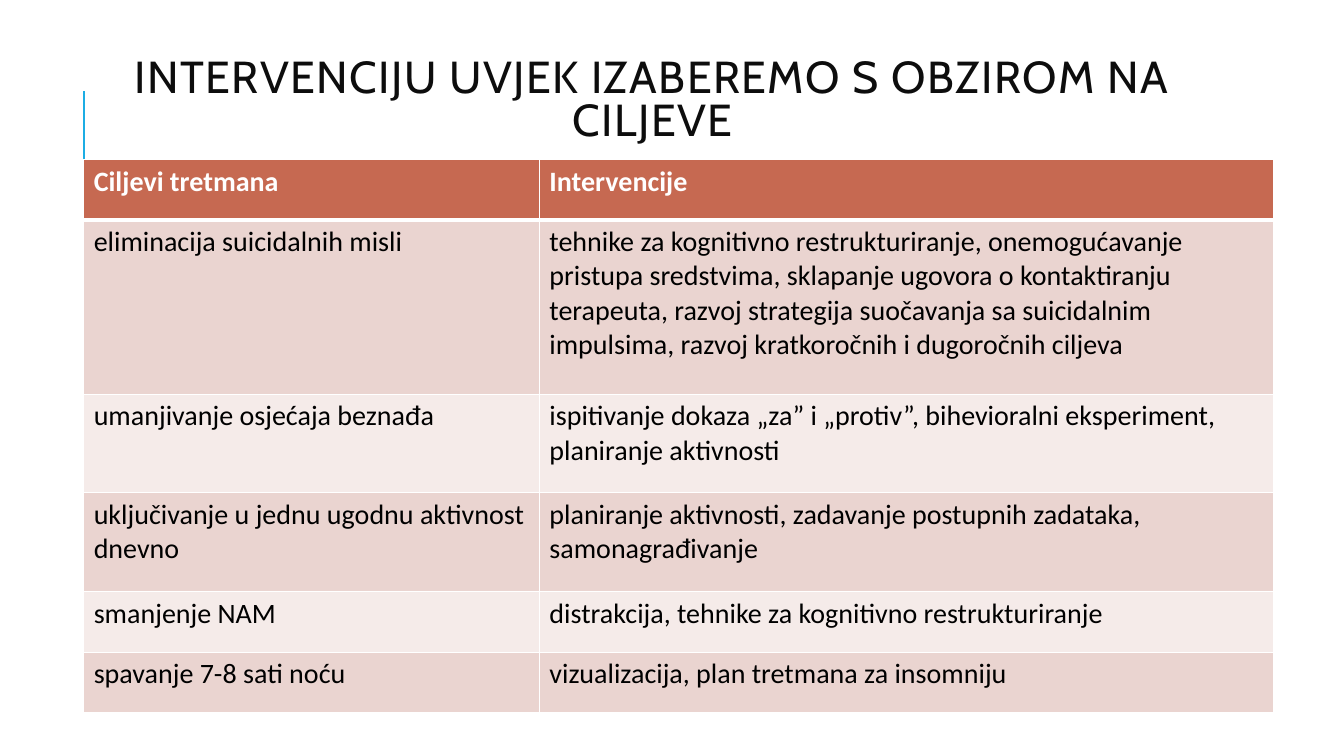
import pptx
import pptx.util
import pptx.dml.color
import pptx.enum.shapes
import pptx.enum.text
import pptx.oxml
import pptx.oxml.ns
import lxml.etree

PX = 9144  # 100 px to the inch
COLORS = {
    "white": "FFFFFF", "black": "000000", "title": "0D0D0D", "accent": "1CADE4",
    "head": "C66951", "dark": "EAD4D0", "light": "F5EBE9",
}


def px(*vals):
    return [pptx.util.Emu(val * PX) for val in vals]


def style(run, font, size, color, bold=False):
    run.font.name = font
    run.font.size = pptx.util.Pt(size)
    run.font.bold = bold
    run.font.color.rgb = pptx.dml.color.RGBColor.from_string(COLORS[color])


deck = pptx.Presentation()
deck.slide_width, deck.slide_height = px(1333, 750)
slide = deck.slides.add_slide(deck.slide_layouts[6])

# Accent line beside the title
line = slide.shapes.add_connector(
    pptx.enum.shapes.MSO_CONNECTOR.STRAIGHT, *px(83, 190, 83, 90))
line.line.color.rgb = pptx.dml.color.RGBColor.from_string(COLORS["accent"])
line.line.width = pptx.util.Pt(1.5)
lxml.etree.SubElement(line._element.spPr, pptx.oxml.ns.qn("a:effectLst"))

# Title
frame = slide.shapes.add_textbox(*px(116, 19, 1063, 164)).text_frame
frame.word_wrap = True
frame.vertical_anchor = pptx.enum.text.MSO_ANCHOR.MIDDLE
frame.text = "INTERVENCIJU UVJEK IZABEREMO S OBZIROM NA CILJEVE"
para = frame.paragraphs[0]
para.alignment = pptx.enum.text.PP_ALIGN.CENTER
para.line_spacing = 0.8
style(para.runs[0], "Cabin", 32, "title")
para.runs[0]._r.get_or_add_rPr().set("spc", "100")

# Table of goals and interventions
rows = [
    (60, "Ciljevi tretmana", "Intervencije"),
    (173, "eliminacija suicidalnih misli",
     "tehnike za kognitivno restrukturiranje, onemogućavanje pristupa sredstvima, "
     "sklapanje ugovora o kontaktiranju terapeuta, razvoj strategija suočavanja sa "
     "suicidalnim impulsima, razvoj kratkoročnih i dugoročnih ciljeva"),
    (98, "umanjivanje osjećaja beznađa",
     "ispitivanje dokaza „za” i „protiv”, bihevioralni eksperiment, planiranje aktivnosti"),
    (98, "uključivanje u jednu ugodnu aktivnost dnevno",
     "planiranje aktivnosti, zadavanje postupnih zadataka, samonagrađivanje"),
    (60, "smanjenje NAM", "distrakcija, tehnike za kognitivno restrukturiranje"),
    (60, "spavanje 7-8 sati noću", "vizualizacija, plan tretmana za insomniju"),
]
table = slide.shapes.add_table(len(rows), 2, *px(83, 158, 1180, 549)).table
table.columns[0].width, table.columns[1].width = px(452, 728)

for i, (height, *texts) in enumerate(rows):
    table.rows[i].height = px(height)[0]
    fill = "head" if i == 0 else "dark" if i % 2 else "light"
    for j, text in enumerate(texts):
        cell = table.cell(i, j)
        cell.text = text
        style(cell.text_frame.paragraphs[0].runs[0], "Calibri", 20,
              "black" if i else "white", i == 0)

        # White borders, thicker under the header
        props = cell._tc.get_or_add_tcPr()
        for side in "LRTB":
            thick = (i, side) in [(0, "B"), (1, "T")]
            width = pptx.util.Pt(3 if thick else 1)
            props.append(pptx.oxml.parse_xml(
                f'<a:ln{side} {pptx.oxml.ns.nsdecls("a")} w="{width}"><a:solidFill>'
                f'<a:srgbClr val="{COLORS["white"]}"/></a:solidFill></a:ln{side}>'))
        cell.fill.solid()
        cell.fill.fore_color.rgb = pptx.dml.color.RGBColor.from_string(COLORS[fill])

deck.save("out.pptx")
